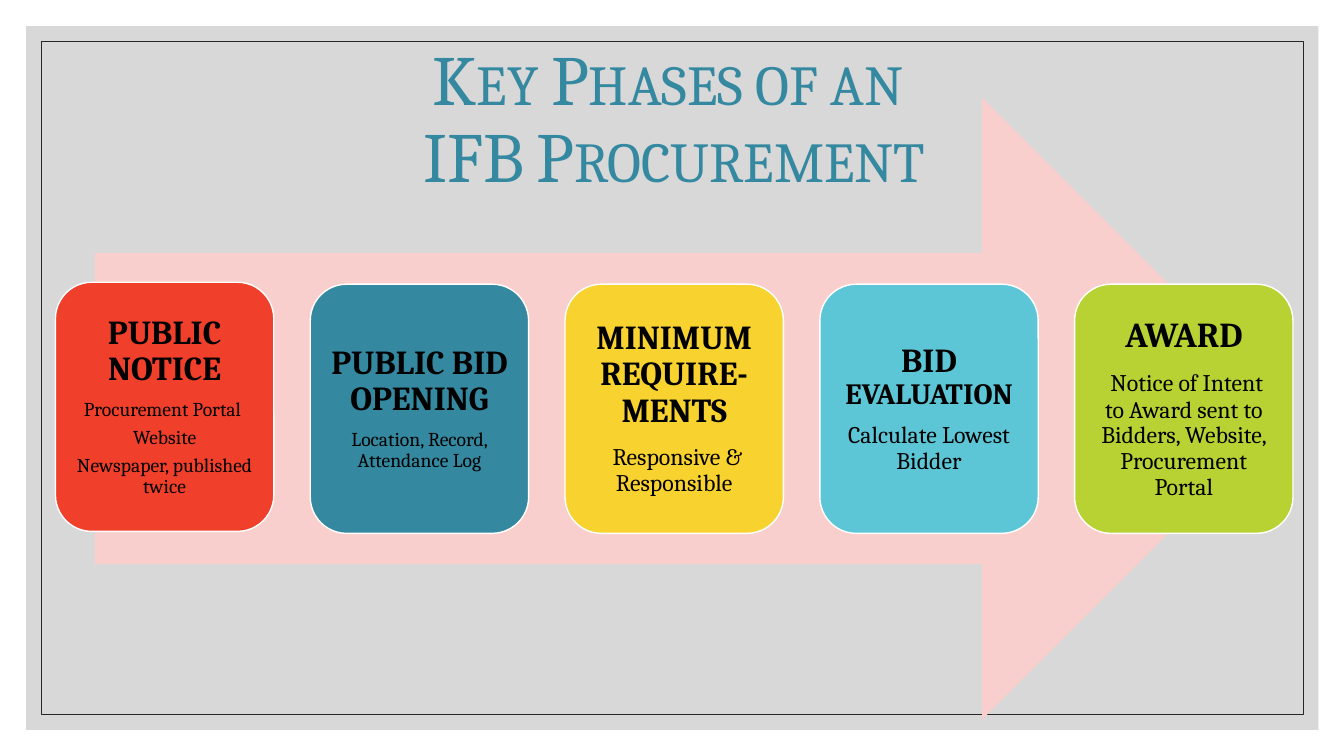
"""Build the slide on the key phases of an IFB procurement."""
from dataclasses import dataclass

from lxml.etree import SubElement
from pptx import Presentation
from pptx.dml.color import RGBColor
from pptx.enum.shapes import MSO_SHAPE as Preset
from pptx.enum.text import MSO_ANCHOR as Anchor, MSO_AUTO_SIZE as AutoSize, PP_ALIGN as Align
from pptx.oxml.ns import qn
from pptx.util import Pt


@dataclass(frozen=True)
class Theme:
    """Colours, typeface and type sizes."""
    font: str = "Cambria"
    backdrop: str = "BFBFBF"
    frame: str = "262626"
    arrow: str = "F9CFCD"
    title: str = "3488A0"
    text: str = "000000"
    card_line: str = "FFFFFF"
    red: str = "F03F2B"
    teal: str = "3488A0"
    yellow: str = "F8D22F"
    cyan: str = "5CC6D6"
    green: str = "B8D233"
    title_size: float = 50.4
    award_size: int = 25
    heading_size: int = 24
    tight_size: int = 21
    gap_size: int = 20
    body_size: int = 17
    small_size: int = 14


THEME = Theme()
CARD_LEFT, CARD_PITCH, CARD_WIDTH, CARD_HEIGHT = 39.6, 182, 156, 178
LINE_SPACING, SPACE_AFTER = 0.9, 0.35

HEADING = THEME.heading_size
BODY = THEME.body_size
SMALL = THEME.small_size
GAP = (" ", THEME.gap_size)

PHASES = [
    (THEME.red, 201.6, [
        [("PUBLIC NOTICE", HEADING)],
        [("Procurement Portal ", SMALL)],
        [("Website", SMALL)],
        [("Newspaper, published twice", SMALL)],
    ]),
    (THEME.teal, 203, [
        [("PUBLIC BID OPENING", HEADING)],
        [("Location, Record, Attendance Log", SMALL)],
    ]),
    (THEME.yellow, 203, [
        [("MINIMUM REQUIRE-MENTS", HEADING)],
        [GAP, ("Responsive & Responsible", BODY)],
    ]),
    (THEME.cyan, 203, [
        [("BID ", HEADING), ("EVALUATION", THEME.tight_size)],
        [("Calculate Lowest Bidder", BODY)],
    ]),
    (THEME.green, 203, [
        [("AWARD", THEME.award_size)],
        [GAP, ("Notice of Intent to Award sent to Bidders, Website, Procurement Portal", BODY)],
    ]),
]


def apply_format(target, values):
    """Set every attribute named in a dict of format values."""
    for name, value in values.items():
        setattr(target, name, value)


def format_font(font, size, color, bold=False):
    """Give a font the theme typeface, a size, a colour and a weight."""
    apply_format(font, {"name": THEME.font, "size": Pt(size), "bold": bold})
    font.color.rgb = RGBColor.from_string(color)


def format_frame(text_frame, inset):
    """Centre a wrapped text frame vertically with equal insets."""
    sides = ("margin_left", "margin_top", "margin_right", "margin_bottom")
    apply_format(text_frame, {
        "word_wrap": True, "auto_size": AutoSize.NONE, "vertical_anchor": Anchor.MIDDLE,
        **dict.fromkeys(sides, Pt(inset)),
    })


def add_preset(slide, preset, bounds, fill=None, line=None, line_width=1):
    """Add a preset shape with a plain fill and outline."""
    shape = slide.shapes.add_shape(preset, *map(Pt, bounds))
    shape.shadow.inherit = False
    if fill:
        shape.fill.solid()
        shape.fill.fore_color.rgb = RGBColor.from_string(fill)
    else:
        shape.fill.background()
    if line:
        shape.line.color.rgb = RGBColor.from_string(line)
        shape.line.width = Pt(line_width)
    else:
        shape.line.fill.background()
    return shape


def add_background(slide):
    """Add the translucent panel and the thin frame inside it."""
    panel = add_preset(slide, Preset.RECTANGLE, (18.7, 18.7, 923, 502.6), THEME.backdrop)
    color = panel.element.spPr.find(qn("a:solidFill")).find(qn("a:srgbClr"))
    SubElement(color, qn("a:alpha"), val="60000")
    add_preset(slide, Preset.RECTANGLE, (29.5, 29.5, 901.4, 481), None, THEME.frame, 0.5)


def place_title(slide, text):
    """Fill, move and format the title placeholder above the background."""
    title = slide.shapes.title
    apply_format(title, {"left": Pt(32.4), "top": Pt(32), "width": Pt(898.6), "height": Pt(109)})
    slide.shapes.element.append(title.element)
    format_frame(title.text_frame, 0)
    title.text_frame.text = text
    paragraph = title.text_frame.paragraphs[0]
    apply_format(paragraph, {"alignment": Align.CENTER, "line_spacing": LINE_SPACING})
    for run in paragraph.runs:
        format_font(run.font, THEME.title_size, THEME.title)
        run.font._element.set("cap", "small")


def add_card(slide, index, fill, top, paragraphs):
    """Add one phase card with a bold heading and its details."""
    bounds = (CARD_LEFT + index * CARD_PITCH, top, CARD_WIDTH, CARD_HEIGHT)
    card = add_preset(slide, Preset.ROUNDED_RECTANGLE, bounds, fill, THEME.card_line)
    text_frame = card.text_frame
    format_frame(text_frame, 6.5)
    for position, runs in enumerate(paragraphs):
        paragraph = text_frame.add_paragraph() if position else text_frame.paragraphs[0]
        apply_format(paragraph, {
            "alignment": Align.CENTER, "line_spacing": LINE_SPACING,
            "space_after": Pt(SPACE_AFTER * runs[0][1]),
        })
        for text, size in runs:
            run = paragraph.add_run()
            run.text = text
            format_font(run.font, size, THEME.text, bold=position == 0)


def main():
    """Build and save the presentation."""
    presentation = Presentation()
    apply_format(presentation, {"slide_width": Pt(960), "slide_height": Pt(540)})
    slide = presentation.slides.add_slide(presentation.slide_layouts.get_by_name("Title Only"))
    add_background(slide)
    place_title(slide, "Key Phases of an \vIFB Procurement")
    add_preset(slide, Preset.RIGHT_ARROW, (67.7, 69.8, 856, 444.2), THEME.arrow)
    for index, phase in enumerate(PHASES):
        add_card(slide, index, *phase)
    presentation.save("out.pptx")


if __name__ == "__main__":
    main()
